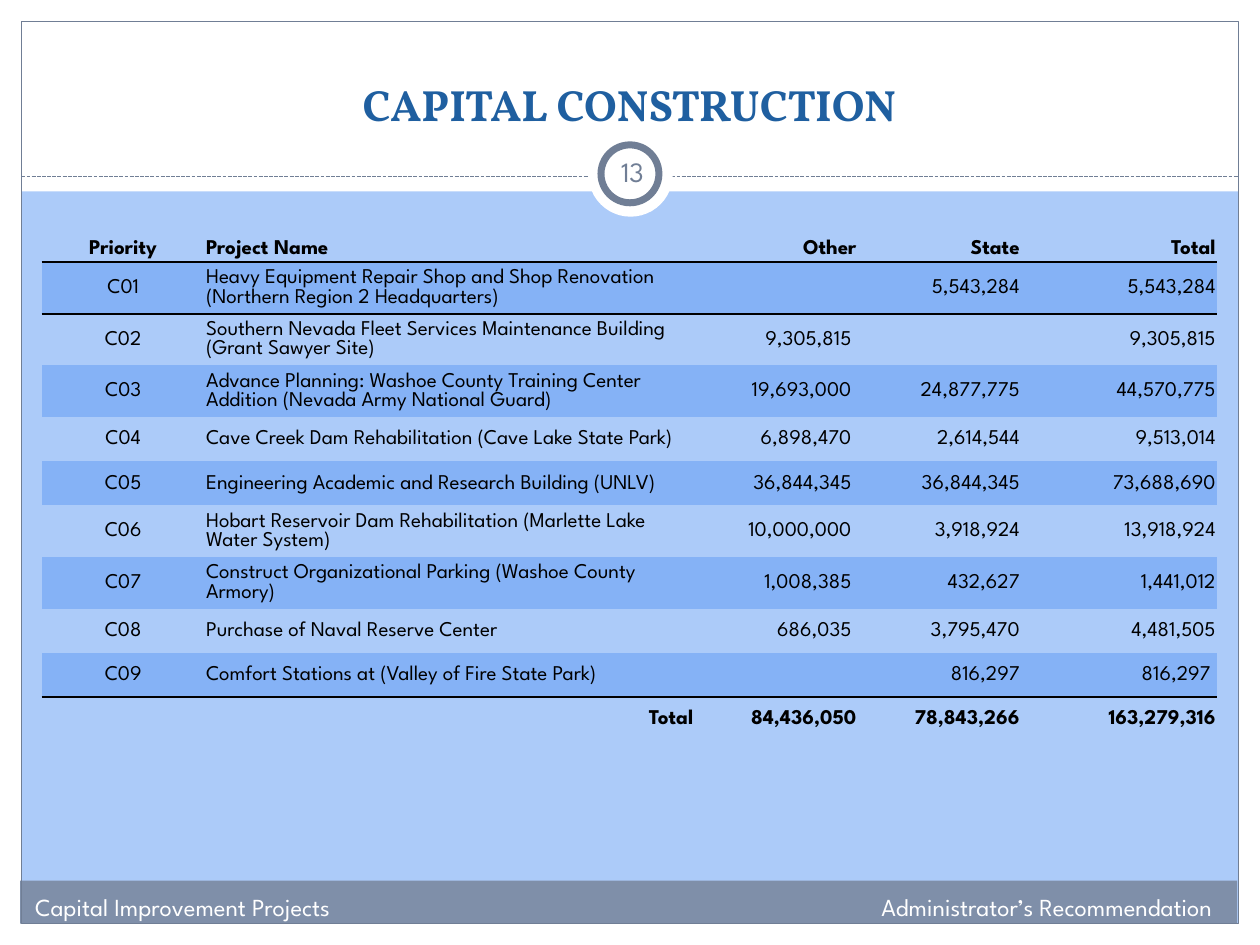
"""Build the capital construction slide with its project funding table."""
from lxml.etree import SubElement
from pptx import Presentation
from pptx.dml.color import RGBColor
from pptx.enum.dml import MSO_LINE
from pptx.enum.shapes import MSO_CONNECTOR, MSO_SHAPE
from pptx.enum.text import MSO_ANCHOR, PP_ALIGN
from pptx.oxml import parse_xml
from pptx.oxml.ns import nsdecls, qn
from pptx.util import Inches, Pt

SKY, BAND = RGBColor(0xAC, 0xCB, 0xF9), RGBColor(0x85, 0xB2, 0xF6)
WHITE, BLACK = RGBColor(0xFF, 0xFF, 0xFF), RGBColor(0, 0, 0)
SLATE, FOOTER = RGBColor(0x70, 0x7E, 0x95), RGBColor(0x7F, 0x8F, 0xA9)
TITLE_BLUE = RGBColor(0x1F, 0x5F, 0xA0)
BODY_FONT, TITLE_FONT = "League Spartan", "Vollkorn"
LEFT, CENTER, RIGHT = PP_ALIGN.LEFT, PP_ALIGN.CENTER, PP_ALIGN.RIGHT
NO_GRID_STYLE = "{2D5ABB26-0587-4C30-8999-92F81FD0307C}"

HEADINGS = ("Priority", "Project Name", "Other", "State", "Total")
PROJECTS = [
    ("C01", "Heavy Equipment Repair Shop and Shop Renovation (Northern Region 2 Headquarters)",
     "", "5,543,284", "5,543,284"),
    ("C02", "Southern Nevada Fleet Services Maintenance Building (Grant Sawyer Site)",
     "9,305,815", "", "9,305,815"),
    ("C03", "Advance Planning: Washoe County Training Center Addition (Nevada Army National Guard)",
     "19,693,000", "24,877,775", "44,570,775"),
    ("C04", "Cave Creek Dam Rehabilitation (Cave Lake State Park)",
     "6,898,470", "2,614,544", "9,513,014"),
    ("C05", "Engineering Academic and Research Building (UNLV)",
     "36,844,345", "36,844,345", "73,688,690"),
    ("C06", "Hobart Reservoir Dam Rehabilitation (Marlette Lake Water System)",
     "10,000,000", "3,918,924", "13,918,924"),
    ("C07", "Construct Organizational Parking (Washoe County Armory)",
     "1,008,385", "432,627", "1,441,012"),
    ("C08", "Purchase of Naval Reserve Center", "686,035", "3,795,470", "4,481,505"),
    ("C09", "Comfort Stations at (Valley of Fire State Park)", "", "816,297", "816,297"),
]
TOTALS = ("Total", "84,436,050", "78,843,266", "163,279,316")

TABLE_LEFT, TABLE_TOP, TABLE_WIDTH = 0.33, 1.87, 9.33
COLUMN_WEIGHTS = (2, 1, 1, 1, 1, 2, 2, 2, 2.4)
CONTENT_COLUMNS = (0, 1, 6, 7, 8)
NAME_COLUMN, NAME_END, OTHER_COLUMN = 1, 5, 6
HEADER_HEIGHT, ONE_LINE, TWO_LINES = 0.2, 0.35, 0.41
LINE_CAPACITY = 52

PANELS = [
    ((0, 7.33, 10, 0.17), WHITE),
    ((0, 0, 10, 1.52), WHITE),
    ((0, 0, 0.17, 7.5), WHITE),
    ((9.83, 0, 0.17, 7.5), WHITE),
    ((0.16, 6.99, 9.66, 0.34), FOOTER),
]
CAPTIONS = [
    ("CAPITAL CONSTRUCTION", (0.33, 0.25, 9.33, 0.83), CENTER, MSO_ANCHOR.BOTTOM,
     TITLE_FONT, 25, TITLE_BLUE, True),
    ("13", (4.77, 1.12, 0.5, 0.48), CENTER, MSO_ANCHOR.MIDDLE, BODY_FONT, 16, SLATE, False),
    ("Capital Improvement Projects", (0.18, 7.03, 5.98, 0.34), LEFT, MSO_ANCHOR.TOP,
     BODY_FONT, 14, WHITE, False),
    ("Administrator’s Recommendation", (3.39, 7.03, 6.33, 0.34), RIGHT, MSO_ANCHOR.TOP,
     BODY_FONT, 14, WHITE, False),
]


def add_run(paragraph, text, align, font, size, color, bold):
    paragraph.alignment = align
    run = paragraph.add_run()
    run.text = text
    run.font.name, run.font.size, run.font.bold = font, Pt(size), bold
    run.font.color.rgb = color


def add_panel(slide, kind, box, fill=None, line=None, width=0.75):
    panel = slide.shapes.add_shape(kind, *map(Inches, box))
    panel.shadow.inherit = False
    if fill is None:
        panel.fill.background()
    else:
        panel.fill.solid()
        panel.fill.fore_color.rgb = fill
    if line is None:
        panel.line.fill.background()
    else:
        panel.line.color.rgb = line
        panel.line.width = Pt(width)


def add_frame(slide):
    for box, fill in PANELS:
        add_panel(slide, MSO_SHAPE.RECTANGLE, box, fill)
    add_panel(slide, MSO_SHAPE.RECTANGLE, (0.17, 0.17, 9.66, 7.16), line=SLATE)
    divider = slide.shapes.add_connector(
        MSO_CONNECTOR.STRAIGHT, Inches(0.17), Inches(1.4), Inches(9.83), Inches(1.4))
    divider.line.color.rgb = SLATE
    divider.line.width = Pt(0.75)
    divider.line.dash_style = MSO_LINE.SQUARE_DOT
    SubElement(divider._element.spPr, qn("a:effectLst"))
    add_panel(slide, MSO_SHAPE.OVAL, (4.67, 1.05, 0.67, 0.67), WHITE)
    add_panel(slide, MSO_SHAPE.OVAL, (4.77, 1.15, 0.46, 0.46), WHITE, SLATE, 4)


def add_caption(slide, text, box, align, anchor, font, size, color, bold):
    frame = slide.shapes.add_textbox(*map(Inches, box)).text_frame
    frame.word_wrap = True
    frame.vertical_anchor = anchor
    if anchor == MSO_ANCHOR.MIDDLE:
        frame.margin_left = frame.margin_right = Inches(0.05)
    add_run(frame.paragraphs[0], text, align, font, size, color, bold)


def rule_cell(cell, *sides):
    properties = cell._tc.get_or_add_tcPr()
    for position, side in enumerate(sides):
        properties.insert(position, parse_xml(
            f'<a:{side} {nsdecls("a")} w="12700"><a:solidFill><a:srgbClr val="{BLACK}"/>'
            f'</a:solidFill><a:prstDash val="solid"/></a:{side}>'))


def add_funding_table(slide):
    last = len(PROJECTS) + 1
    heights = [HEADER_HEIGHT]
    heights += [TWO_LINES if len(project[1]) > LINE_CAPACITY else ONE_LINE for project in PROJECTS]
    heights.append(ONE_LINE)
    content = [dict(zip(CONTENT_COLUMNS, row)) for row in (HEADINGS, *PROJECTS)]
    content.append(dict(zip((NAME_END, *CONTENT_COLUMNS[2:]), TOTALS)))

    table = slide.shapes.add_table(
        len(heights), len(COLUMN_WEIGHTS), Inches(TABLE_LEFT), Inches(TABLE_TOP),
        Inches(TABLE_WIDTH), Inches(sum(heights))).table
    table.first_row = table.horz_banding = False
    table._tbl.tblPr.find(qn("a:tableStyleId")).text = NO_GRID_STYLE
    for column, weight in zip(table.columns, COLUMN_WEIGHTS):
        column.width = Inches(TABLE_WIDTH * weight / sum(COLUMN_WEIGHTS))

    for r, (height, values) in enumerate(zip(heights, content)):
        table.rows[r].height = Inches(height)
        in_body = 0 < r < last
        if r < last:
            table.cell(r, NAME_COLUMN).merge(table.cell(r, NAME_END))
        for c in range(len(COLUMN_WEIGHTS)):
            cell = table.cell(r, c)
            inset = in_body and (c == OTHER_COLUMN or (r, c) == (last - 1, 8))
            cell.margin_left = cell.margin_top = Inches(0.01)
            cell.margin_right = Inches(0.05 if inset else 0.01)
            cell.margin_bottom = 0
            cell.vertical_anchor = MSO_ANCHOR.MIDDLE
            if in_body and r % 2:
                cell.fill.solid()
                cell.fill.fore_color.rgb = BAND
            else:
                cell.fill.background()
            if r in (1, last):
                rule_cell(cell, "lnT")
            elif r in (0, last - 1):
                rule_cell(cell, "lnB")
            align = CENTER if c == 0 else LEFT if c < NAME_END else RIGHT
            add_run(cell.text_frame.paragraphs[0], values.get(c, ""), align,
                    BODY_FONT, 12, BLACK, not in_body)


def main():
    deck = Presentation()
    deck.slide_width, deck.slide_height = Inches(10), Inches(7.5)
    slide = deck.slides.add_slide(deck.slide_layouts[6])
    slide.background.fill.solid()
    slide.background.fill.fore_color.rgb = SKY
    add_frame(slide)
    for caption in CAPTIONS:
        add_caption(slide, *caption)
    add_funding_table(slide)
    deck.save("out.pptx")


if __name__ == "__main__":
    main()
